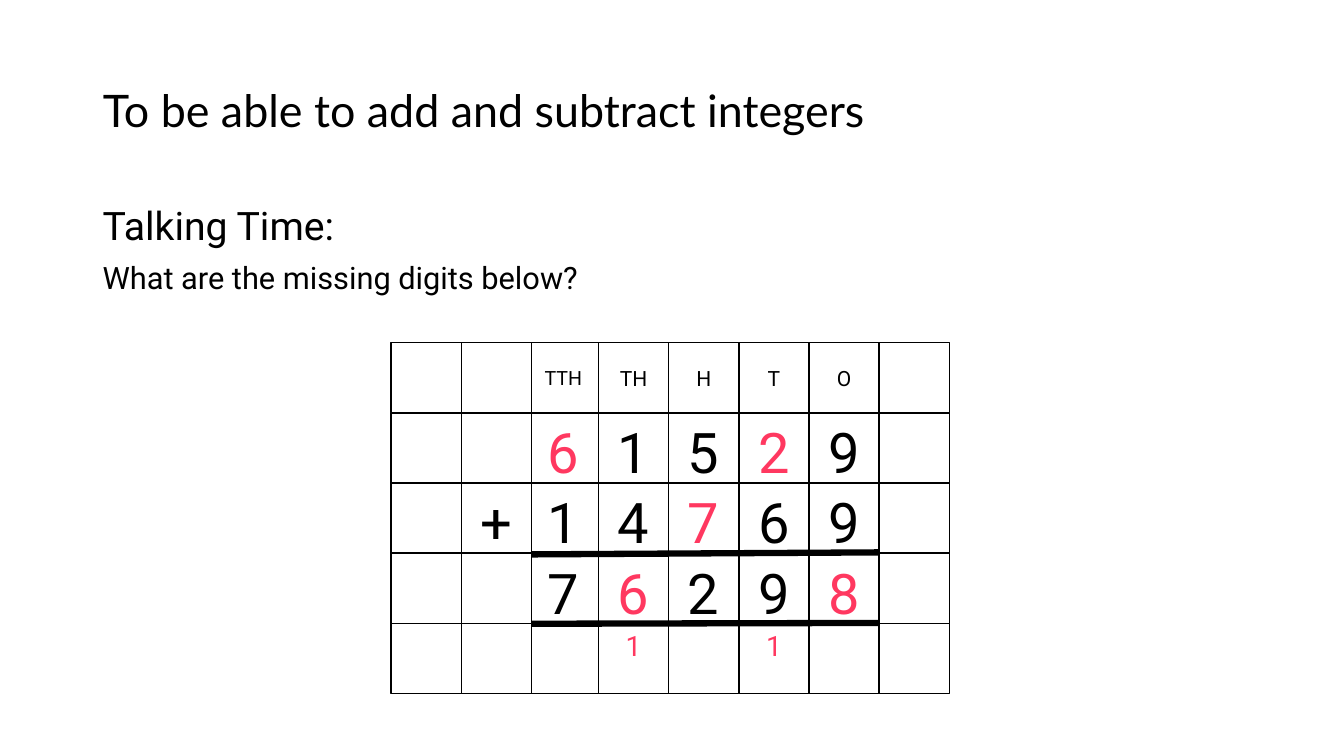
from typing import NamedTuple

from lxml.etree import SubElement
from pptx import Presentation
from pptx.dml.color import RGBColor
from pptx.enum.shapes import MSO_CONNECTOR, MSO_SHAPE
from pptx.enum.text import MSO_ANCHOR, PP_ALIGN
from pptx.oxml.ns import qn
from pptx.util import Inches, Pt

BLACK = RGBColor(0x00, 0x00, 0x00)
WHITE = RGBColor(0xFF, 0xFF, 0xFF)
PINK = RGBColor(0xFF, 0x38, 0x60)

CELL = 3.48 / 5
GRID_TOP = 3.4


class Row(NamedTuple):
    labels: list[str]
    size: int
    missing: tuple[int, ...] = ()
    anchor: MSO_ANCHOR = MSO_ANCHOR.TOP


class Block(NamedTuple):
    left: float
    rows: list[Row]


class Rule(NamedTuple):
    x1: float
    y1: float
    x2: float
    y2: float


EMPTY = Row(["", ""], 40)
SUM_BLOCK = Block(5.24, [
    Row(["TTH", "TH", "H", "T", "O", ""], 15, anchor=MSO_ANCHOR.MIDDLE),
    Row(["6", "1", "5", "2", "9", ""], 40, (0, 3)),
    Row(["1", "4", "7", "6", "9", ""], 40, (2,)),
    Row(["7", "6", "2", "9", "8", ""], 40, (1, 4)),
    Row(["", "1", "", "1", "", ""], 20, (1, 3)),
])
SIGN_BLOCK = Block(3.88, [EMPTY, EMPTY, Row(["", "+"], 40), EMPTY, EMPTY])
RULES = [Rule(4.58, 6.19, 8.72, 6.18), Rule(5.24, 5.5, 8.72, 5.48)]


def add_run(p, text: str, size: int, font: str = "Roboto",
            color: RGBColor = BLACK) -> None:
    r = p.add_run()
    r.text = text
    r.font.name = font
    r.font.size = Pt(size)
    r.font.color.rgb = color


def add_cell(s, left: float, top: float, text: str, size: int,
             color: RGBColor, anchor: MSO_ANCHOR) -> None:
    sp = s.shapes.add_shape(MSO_SHAPE.RECTANGLE, Inches(left), Inches(top),
                            Inches(CELL), Inches(CELL))
    sp.shadow.inherit = False
    sp.fill.solid()
    sp.fill.fore_color.rgb = WHITE
    sp.line.color.rgb = BLACK
    sp.line.width = Pt(1)
    if text:
        tf = sp.text_frame
        tf.vertical_anchor = anchor
        p = tf.paragraphs[0]
        p.alignment = PP_ALIGN.CENTER
        add_run(p, text, size, color=color)


def add_block(s, block: Block) -> None:
    for i, row in enumerate(block.rows):
        for j, label in enumerate(row.labels):
            size = 14 if label == "TTH" else row.size
            color = PINK if j in row.missing else BLACK
            add_cell(s, block.left + j * CELL, GRID_TOP + i * CELL,
                     label, size, color, row.anchor)


def add_rule(s, rule: Rule) -> None:
    line = s.shapes.add_connector(MSO_CONNECTOR.STRAIGHT,
                                  Inches(rule.x1), Inches(rule.y1),
                                  Inches(rule.x2), Inches(rule.y2))
    line.line.color.rgb = BLACK
    line.line.width = Pt(4.5)
    SubElement(line._element.spPr, qn("a:effectLst"))


def main() -> None:
    prs = Presentation()
    prs.slide_width, prs.slide_height = Inches(13.33), Inches(7.5)
    s = prs.slides.add_slide(prs.slide_layouts[5])

    # Title
    title = s.shapes.title
    title.left, title.top = Inches(0.92), Inches(0.4)
    title.width, title.height = Inches(9.6), Inches(1.45)
    title.text_frame.vertical_anchor = MSO_ANCHOR.MIDDLE
    p = title.text_frame.paragraphs[0]
    p.alignment = PP_ALIGN.LEFT
    p.line_spacing = 0.9
    add_run(p, "To be able to add and subtract integers", 32, "Lato")

    # Question
    tf = s.shapes.add_textbox(Inches(0.92), Inches(2), Inches(11.5),
                              Inches(1.2)).text_frame
    tf.word_wrap = True
    heading, question = tf.paragraphs[0], tf.add_paragraph()
    heading.line_spacing = question.line_spacing = 0.9
    question.space_before = Pt(10)
    add_run(heading, "Talking Time:", 28)
    add_run(question, "What are the missing digits below?", 22)

    # Column addition: the sign block covers the left end of the lower rule
    add_block(s, SUM_BLOCK)
    for rule in RULES:
        add_rule(s, rule)
    add_block(s, SIGN_BLOCK)

    prs.save("out.pptx")


if __name__ == "__main__":
    main()
